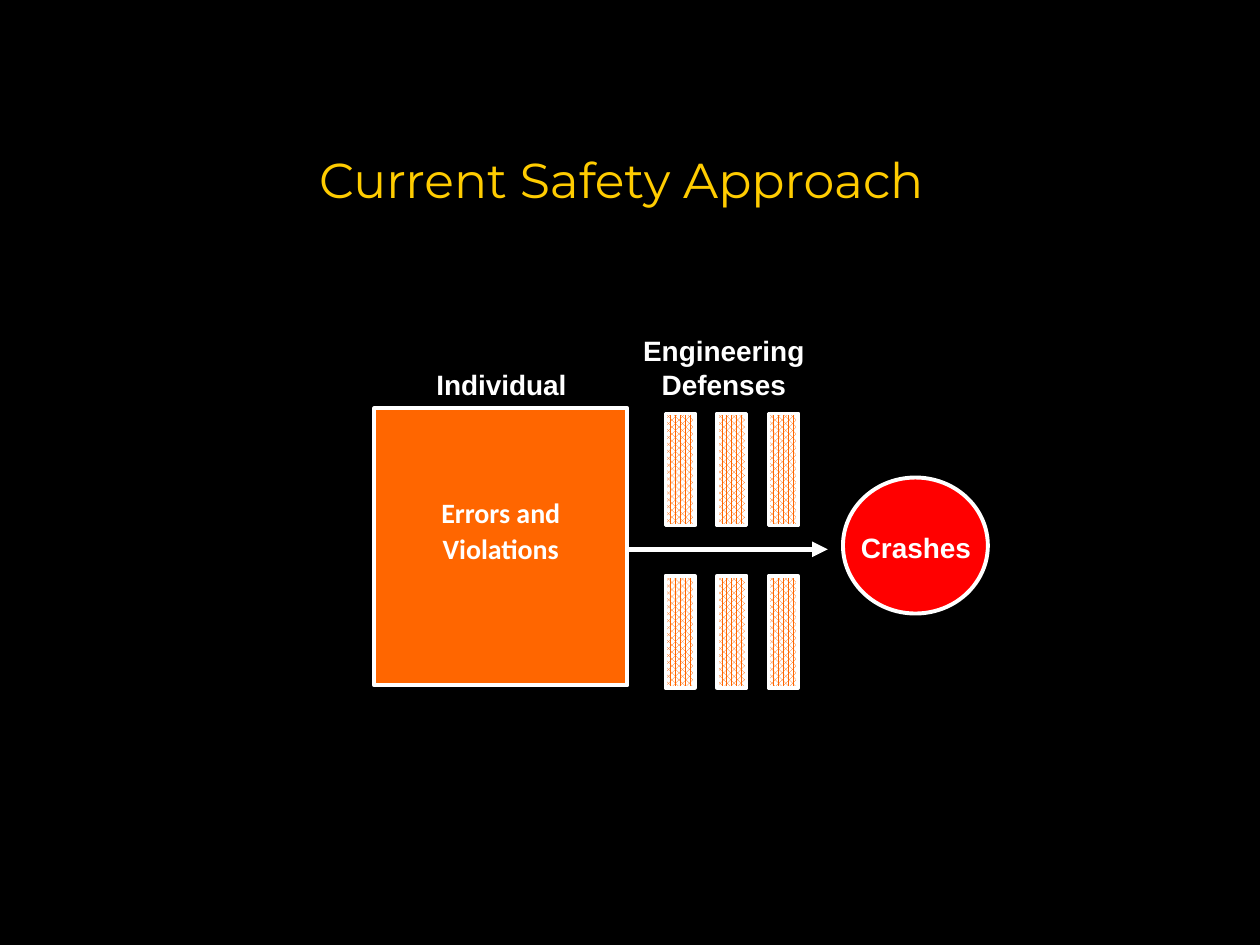
"""Build the slide on the current safety approach."""
from dataclasses import dataclass
from itertools import product

from lxml import etree
from pptx import Presentation
from pptx import util as u
from pptx.dml.color import RGBColor as Rgb
from pptx.enum import dml, shapes, text
from pptx.oxml.ns import qn


@dataclass(frozen=True)
class Theme:
    """Colours, fonts and sizes."""
    back: str = "000000"
    head: str = "FFCC00"
    ink: str = "FFFFFF"
    box: str = "FF6600"
    crash: str = "FF0000"
    title: int = 28
    label: int = 16
    edge: float = 2.25
    thin: float = 2
    bold: float = 3


T = Theme()
WIDE, HIGH = u.Inches(10), u.Inches(7.5)
KIND = shapes.MSO_SHAPE

TITLE = ("Current Safety Approach", (8.9, 12.8, 80.8, 12.27))
CAUSE = ("Errors and Violations", (29.7, 43.2, 20.1, 29.33))
CRASH = (66.9, 50.53, 11.5, 14.4)
ARROW = (49.8, 58.13, 15.9, 0)
LABELS = [
    ("Crashes", (67, 55.47, 11.4, 4.93)),
    ("Engineering Defenses", (49.6, 34.67, 15.7, 8.53)),
    ("Individual", (32.2, 38.27, 15.2, 4.93)),
]
BARS = {"left": 52.8, "step": 4.1, "cols": 3, "tops": (43.73, 60.93),
        "size": (2.35, 11.87)}


def place(area):
    """Turn percent shares of the slide into lengths."""
    return [round(part * full / 100)
            for part, full in zip(area, (WIDE, HIGH, WIDE, HIGH))]


def write(frame, words, font, size, hue, bold=False):
    """Add one centred run to the first paragraph."""
    frame.word_wrap = True
    par = frame.paragraphs[0]
    par.alignment = text.PP_ALIGN.CENTER
    run = par.add_run()
    run.text = words
    run.font.name, run.font.size, run.font.bold = font, u.Pt(size), bold
    run.font.color.rgb = Rgb.from_string(hue)
    return par


def draw(slide, kind, area, width, hue=None):
    """Add an outlined shape, solid if a hue is given, else dotted."""
    shape = slide.shapes.add_shape(kind, *place(area))
    shape.shadow.inherit = False
    fill = shape.fill
    if hue:
        fill.solid()
        fill.fore_color.rgb = Rgb.from_string(hue)
    else:
        fill.patterned()
        fill.pattern = dml.MSO_PATTERN.PERCENT_75
        fill.fore_color.rgb = Rgb.from_string(T.box)
        fill.back_color.rgb = Rgb.from_string(T.ink)
    shape.line.color.rgb = Rgb.from_string(T.ink)
    shape.line.width = u.Pt(width)
    return shape


def link(slide, area):
    """Add an arrow across the area."""
    left, top, width, high = place(area)
    line = slide.shapes.add_connector(
        shapes.MSO_CONNECTOR.STRAIGHT, left, top, left + width, top + high)
    line.line.color.rgb = Rgb.from_string(T.ink)
    line.line.width = u.Pt(T.bold)
    etree.SubElement(line.line._get_or_add_ln(), qn("a:tailEnd"), type="triangle")
    etree.SubElement(line._element.spPr, qn("a:effectLst"))


def main():
    """Lay out the slide and save it."""
    deck = Presentation()
    deck.slide_width, deck.slide_height = WIDE, HIGH
    slide = deck.slides.add_slide(deck.slide_layouts[5])
    slide.background.fill.solid()
    slide.background.fill.fore_color.rgb = Rgb.from_string(T.back)

    words, area = TITLE
    head = slide.shapes.title
    head.left, head.top, head.width, head.height = place(area)
    head.text_frame.vertical_anchor = text.MSO_ANCHOR.MIDDLE
    write(head.text_frame, words, "Montserrat", T.title, T.head)

    words, area = CAUSE
    frame = draw(slide, KIND.RECTANGLE, area, T.edge, T.box).text_frame
    frame.vertical_anchor = text.MSO_ANCHOR.TOP
    frame.margin_top = round(0.09 * HIGH)
    par = write(frame, words, "Calibri", T.label, T.ink, True)
    par.line_spacing, par.space_after = 1.07, u.Pt(8)

    for top, col in product(BARS["tops"], range(BARS["cols"])):
        left = BARS["left"] + col * BARS["step"]
        draw(slide, KIND.RECTANGLE, (left, top, *BARS["size"]), T.thin)

    draw(slide, KIND.OVAL, CRASH, T.edge, T.crash)
    link(slide, ARROW)

    for words, area in LABELS:
        frame = slide.shapes.add_textbox(*place(area)).text_frame
        write(frame, words, "Arial", T.label, T.ink, True)
        frame.auto_size = text.MSO_AUTO_SIZE.SHAPE_TO_FIT_TEXT

    deck.save("out.pptx")


if __name__ == "__main__":
    main()
